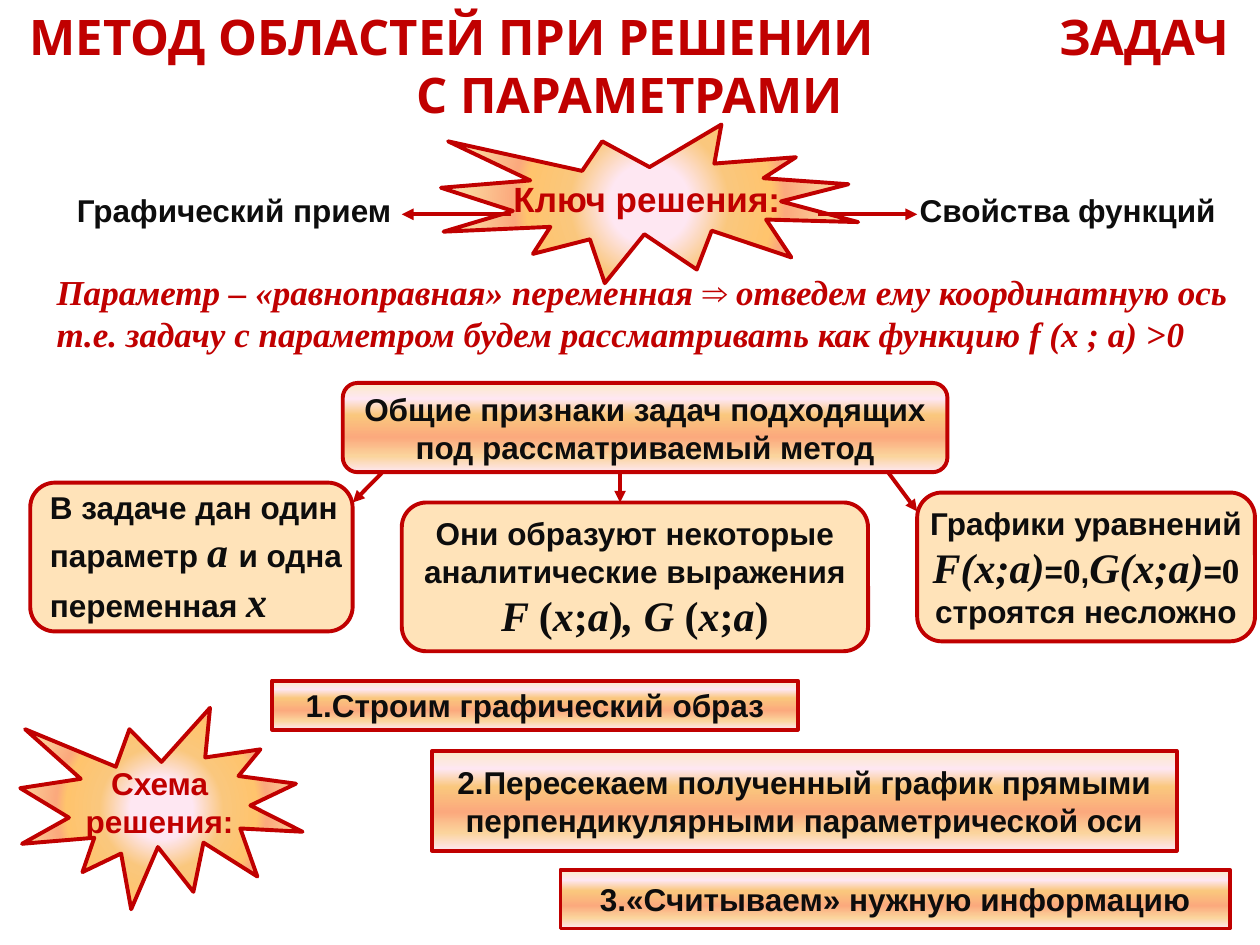
"""Build a slide on the method of regions for solving problems with parameters."""
from collections import namedtuple
from dataclasses import dataclass

from lxml import etree
from pptx import Presentation
from pptx.dml.color import RGBColor
from pptx.enum.shapes import MSO_CONNECTOR, MSO_SHAPE
from pptx.enum.text import MSO_ANCHOR, PP_ALIGN
from pptx.oxml.ns import qn
from pptx.util import Cm, Pt

LEFT, CENTER = PP_ALIGN.LEFT, PP_ALIGN.CENTER
TOP, MIDDLE = MSO_ANCHOR.TOP, MSO_ANCHOR.MIDDLE
BURST, RECT = MSO_SHAPE.EXPLOSION1, MSO_SHAPE.RECTANGLE
ROUNDED, HEADER = MSO_SHAPE.ROUNDED_RECTANGLE, MSO_SHAPE.FLOWCHART_ALTERNATE_PROCESS
STRAIGHT = MSO_CONNECTOR.STRAIGHT

Style = namedtuple("Style", "font size color italic")


@dataclass(frozen=True)
class Theme:
    red: str = "C00000"
    cream: str = "FFE3B9"
    outline: float = 2.25
    band: tuple = ((0, "FBEAC7"), (18, "FEE7F2"), (36, "FAC77D"),
                   (61, "FBA97D"), (82, "FBD49C"), (100, "FEE7F2"))
    glow: tuple = ((18, "FEE7F2"), (36, "FAC77D"), (55, "FFC46D"),
                   (61, "FBA97D"), (82, "FBD49C"), (100, "FEE7F2"))
    title: Style = Style("Karla", 28, "C00000", False)
    key: Style = Style("Arial", 20, "C00000", False)
    scheme: Style = Style("Arial", 18, "C00000", False)
    body: Style = Style("Arial", 18, "0D0D0D", False)
    idea: Style = Style("Times New Roman", 20, "C00000", True)
    relation: Style = Style("Times New Roman", 20, "C00000", False)
    variable: Style = Style("Times New Roman", 24, "0D0D0D", True)
    bracket: Style = Style("Times New Roman", 24, "0D0D0D", False)
    zero: Style = Style("Times New Roman", 20, "0D0D0D", False)


THEME = Theme()


def write(shape, lines, align, anchor, wrap):
    frame = shape.text_frame
    frame.word_wrap = wrap
    frame.vertical_anchor = anchor
    for number, line in enumerate(lines):
        para = frame.add_paragraph() if number else frame.paragraphs[0]
        para.alignment = align
        for text, style in line:
            span = para.add_run()
            span.text = text
            span.font.name = style.font
            span.font.size = Pt(style.size)
            span.font.bold = True
            span.font.italic = style.italic
            span.font.color.rgb = RGBColor.from_string(style.color)
    return frame


def paint_gradient(shape, stops, radial):
    shape.fill.gradient()
    gradient = shape.element.spPr.find(qn("a:gradFill"))
    for child in list(gradient):
        gradient.remove(child)
    stop_list = etree.SubElement(gradient, qn("a:gsLst"))
    for percent, color in stops:
        stop = etree.SubElement(stop_list, qn("a:gs"), pos=str(percent * 1000))
        etree.SubElement(stop, qn("a:srgbClr"), val=color)
    if radial:
        circle = etree.SubElement(gradient, qn("a:path"), path="circle")
        etree.SubElement(circle, qn("a:fillToRect"), l="50000", t="50000", r="50000", b="50000")
    else:
        etree.SubElement(gradient, qn("a:lin"), ang="5400000", scaled="1")


deck = Presentation()
deck.slide_width, deck.slide_height = Cm(25.4), Cm(19.05)
page = deck.slides.add_slide(deck.slide_layouts[6])

title = page.shapes.add_textbox(Cm(0), Cm(0), Cm(25.4), Cm(2.62))
title_frame = write(title, [[("МЕТОД ОБЛАСТЕЙ ПРИ РЕШЕНИИ\tЗАДАЧ", THEME.title)],
                            [("С ПАРАМЕТРАМИ", THEME.title)]], CENTER, TOP, True)
title_frame.margin_left = title_frame.margin_right = Cm(0.6)
first_line = title_frame.paragraphs[0]
first_line.alignment = LEFT
tabs = etree.SubElement(first_line._p.get_or_add_pPr(), qn("a:tabLst"))
etree.SubElement(tabs, qn("a:tab"), pos=str(Cm(20.75)), algn="l")

captions = [
    ((1.3, 3.73, 7.01, 1.02), [("Графический прием", THEME.body)]),
    ((18.29, 3.73, 7.11, 1.02), [("Свойства функций", THEME.body)]),
    ((0.89, 5.33, 24.51, 1.96), [
        ("Параметр – «равноправная» переменная ⇒ отведем ему координатную ось "
         "т.е. задачу с параметром будем рассматривать как функцию f (x ; a) ", THEME.idea),
        (">", THEME.relation), ("0", THEME.idea)]),
]

arguments = [("(", THEME.bracket), ("x", THEME.variable), (";", THEME.bracket),
             ("a", THEME.variable), (")", THEME.bracket)]
equals_zero = [("=", THEME.body), ("0", THEME.zero)]

panels = [
    (BURST, (8.89, 2.51, 8.41, 3.2), CENTER, [[("Ключ решения:", THEME.key)]]),
    (HEADER, (6.91, 7.72, 12.19, 1.8), CENTER, [
        [("Общие признаки задач подходящих", THEME.body)],
        [("под рассматриваемый метод", THEME.body)]]),
    (ROUNDED, (0.61, 9.73, 6.5, 3), LEFT, [
        [("В задаче дан один", THEME.body)],
        [("параметр ", THEME.body), ("а ", THEME.variable), ("и одна", THEME.body)],
        [("переменная ", THEME.body), ("х", THEME.variable)]]),
    (ROUNDED, (8.1, 10.13, 9.4, 3), CENTER, [
        [("Они образуют некоторые", THEME.body)],
        [("аналитические выражения", THEME.body)],
        [("F ", THEME.variable), *arguments, (", G ", THEME.variable), *arguments]]),
    (ROUNDED, (18.49, 9.93, 6.81, 3), CENTER, [
        [("Графики уравнений", THEME.body)],
        [("F(x;a)", THEME.variable), *equals_zero, (",", THEME.body),
         ("G(x;a)", THEME.variable), *equals_zero],
        [("строятся несложно", THEME.body)]]),
    (RECT, (5.49, 13.72, 10.59, 0.99), CENTER, [[("1.Строим графический образ", THEME.body)]]),
    (RECT, (8.71, 15.14, 15.01, 2.01), CENTER, [
        [("2.Пересекаем полученный график прямыми", THEME.body)],
        [("перпендикулярными параметрической оси", THEME.body)]]),
    (RECT, (11.3, 17.53, 13.49, 1.19), CENTER, [
        [("3.«Считываем» нужную информацию", THEME.body)]]),
    (BURST, (0.41, 14.27, 5.69, 4.06), CENTER, [
        [("Схема", THEME.scheme)], [("решения:", THEME.scheme)]]),
]

arrows = [
    (7.7, 9.53, 7.11, 10.13),
    (12.5, 9.53, 12.5, 10.13),
    (17.91, 9.53, 18.49, 10.31),
    (10.31, 4.32, 8.1, 4.32),
    (16.48, 4.32, 18.49, 4.32),
]

for place, line in captions:
    caption = page.shapes.add_textbox(*map(Cm, place))
    write(caption, [line], LEFT, TOP, True)

for kind, place, align, lines in panels:
    box = page.shapes.add_shape(kind, *map(Cm, place))
    box.shadow.inherit = False
    box.line.color.rgb = RGBColor.from_string(THEME.red)
    box.line.width = Pt(THEME.outline)
    if kind == ROUNDED:
        box.fill.solid()
        box.fill.fore_color.rgb = RGBColor.from_string(THEME.cream)
    else:
        paint_gradient(box, THEME.glow if kind == BURST else THEME.band, kind == BURST)
    write(box, lines, align, MIDDLE, False)

for ends in arrows:
    arrow = page.shapes.add_connector(STRAIGHT, *map(Cm, ends))
    arrow.line.color.rgb = RGBColor.from_string(THEME.red)
    arrow.line.width = Pt(THEME.outline)
    etree.SubElement(arrow.line._get_or_add_ln(), qn("a:tailEnd"), type="triangle")
    etree.SubElement(arrow.element.spPr, qn("a:effectLst"))

deck.save("out.pptx")
